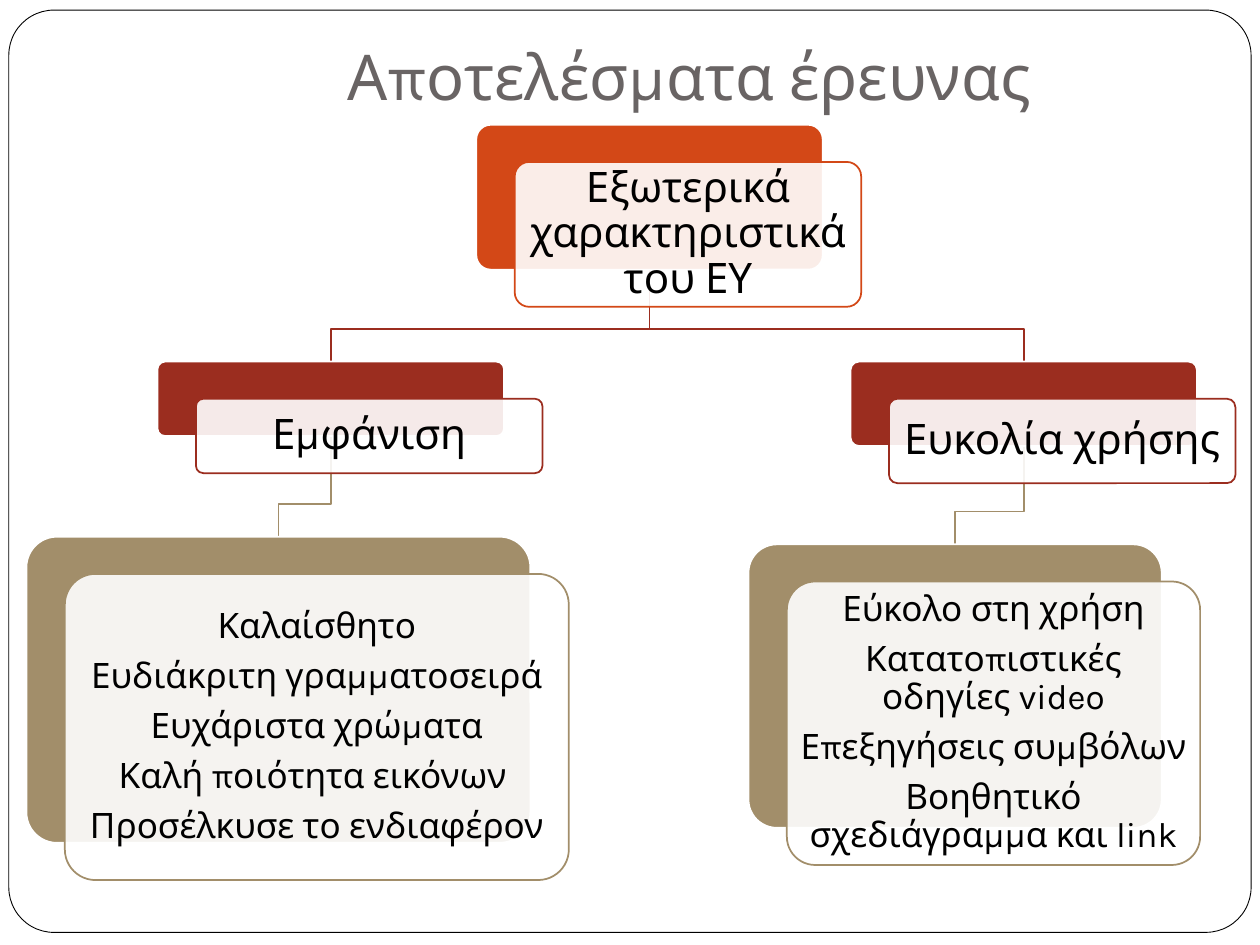
from lxml.etree import SubElement
from pptx import Presentation
from pptx.dml.color import RGBColor
from pptx.enum.shapes import MSO_SHAPE
from pptx.enum.text import MSO_ANCHOR, PP_ALIGN
from pptx.oxml.ns import qn
from pptx.util import Inches, Pt

WHITE = RGBColor(0xFF, 0xFF, 0xFF)
BLACK = RGBColor(0, 0, 0)
GRAY = RGBColor(0x69, 0x64, 0x64)
ORANGE = RGBColor(0xD3, 0x48, 0x17)
RED = RGBColor(0x9B, 0x2D, 0x1F)
TAN = RGBColor(0xA2, 0x8E, 0x6A)
FONT = "Karla"
COLS, ROWS = 100, 75
WIDTH, HEIGHT = Inches(10), Inches(7.5)
SHIFT = (3.05, 2.95)
DROP = 2.6

ROOT = ((37.8, 9.9, 27.5, 11.5), ORANGE, 24, 0.1, ["Εξωτερικά χαρακτηριστικά του ΕΥ"])
LOOK = ((12.5, 28.7, 27.5, 5.9), RED, 24, 0.1, ["Εμφάνιση"])
EASE = ((67.5, 28.7, 27.5, 6.7), RED, 24, 0.1, ["Ευκολία χρήσης"])
LOOKS = ((2.1, 42.6, 40, 24.3), TAN, 20, 0.08, [
    "Καλαίσθητο",
    "Ευδιάκριτη γραμματοσειρά",
    "Ευχάριστα χρώματα",
    "Καλή ποιότητα εικόνων ",
    "Προσέλκυσε το ενδιαφέρον",
])
AIDS = ((59.4, 43.2, 32.8, 22.5), TAN, 20, 0.08, [
    "Εύκολο στη χρήση",
    "Κατατοπιστικές οδηγίες video",
    "Επεξηγήσεις συμβόλων",
    "Βοηθητικό σχεδιάγραμμα και link",
])
NODES = [ROOT, LOOK, LOOKS, EASE, AIDS]
LINKS = [(EASE, AIDS), (ROOT, EASE), (LOOK, LOOKS), (ROOT, LOOK)]


def col(n):
    return round(WIDTH * n / COLS)


def row(n):
    return round(HEIGHT * n / ROWS)


def add_run(para, text, size, color):
    run = para.add_run()
    run.text = text
    run.font.name = FONT
    run.font.size = Pt(size)
    run.font.color.rgb = color


def add_title(slide, text):
    title = slide.shapes.title
    title.left, title.top = col(12.2), row(2.1)
    title.width, title.height = col(85), row(7.9)
    frame = title.text_frame
    frame.vertical_anchor = MSO_ANCHOR.BOTTOM
    frame.margin_bottom = Inches(0.1)
    para = frame.paragraphs[0]
    para.alignment = PP_ALIGN.CENTER
    add_run(para, text, 36, GRAY)


def add_box(slide, area, curve, line, width=1, fill=None, alpha=None):
    x, y, w, h = area
    box = slide.shapes.add_shape(
        MSO_SHAPE.ROUNDED_RECTANGLE, col(x), row(y), col(w), row(h))
    box.adjustments[0] = curve
    box.shadow.inherit = False
    box.line.color.rgb = line
    box.line.width = Pt(width)
    if fill is None:
        box.fill.background()
    else:
        box.fill.solid()
        box.fill.fore_color.rgb = fill
    if alpha:
        tint = box.fill._xPr.find(qn("a:solidFill"))[0]
        SubElement(tint, qn("a:alpha")).set("val", str(alpha * 1000))
    return box


def add_card(slide, node):
    area, color, size, inset, lines = node
    x, y, w, h = area
    add_box(slide, area, 0.1, WHITE, fill=color)
    front = (x + SHIFT[0], y + SHIFT[1], w, h)
    card = add_box(slide, front, 0.1, color, fill=WHITE, alpha=90)
    frame = card.text_frame
    frame.word_wrap = True
    frame.vertical_anchor = MSO_ANCHOR.MIDDLE
    pad = Inches(inset) - round(0.029 * row(h))
    frame.margin_left = frame.margin_right = pad
    frame.margin_top = frame.margin_bottom = pad
    for i, text in enumerate(lines):
        para = frame.add_paragraph() if i else frame.paragraphs[0]
        para.alignment = PP_ALIGN.CENTER
        para.line_spacing = 0.9
        para.space_after = Pt(size * 0.35)
        add_run(para, text, size, BLACK)


def add_link(slide, head, tail):
    x, y, w, h = head[0]
    left, top, wide, _ = tail[0]
    start, end, bend = col(x + w / 2), col(left + wide / 2), row(top - DROP)
    path = slide.shapes.build_freeform(start, row(y + h))
    path.add_line_segments(
        [(start, bend), (end, bend), (end, row(top))], close=False)
    link = path.convert_to_shape()
    link.shadow.inherit = False
    link.fill.background()
    link.line.color.rgb = tail[1]
    link.line.width = Pt(1)


def main():
    deck = Presentation()
    deck.slide_width, deck.slide_height = WIDTH, HEIGHT
    slide = deck.slides.add_slide(deck.slide_layouts[5])
    add_box(slide, (0.7, 0.8, 98.6, 73.2), 0.049, BLACK, 0.5)
    add_title(slide, "Αποτελέσματα έρευνας")
    for head, tail in LINKS:
        add_link(slide, head, tail)
    for node in NODES:
        add_card(slide, node)
    deck.save("out.pptx")


if __name__ == "__main__":
    main()
